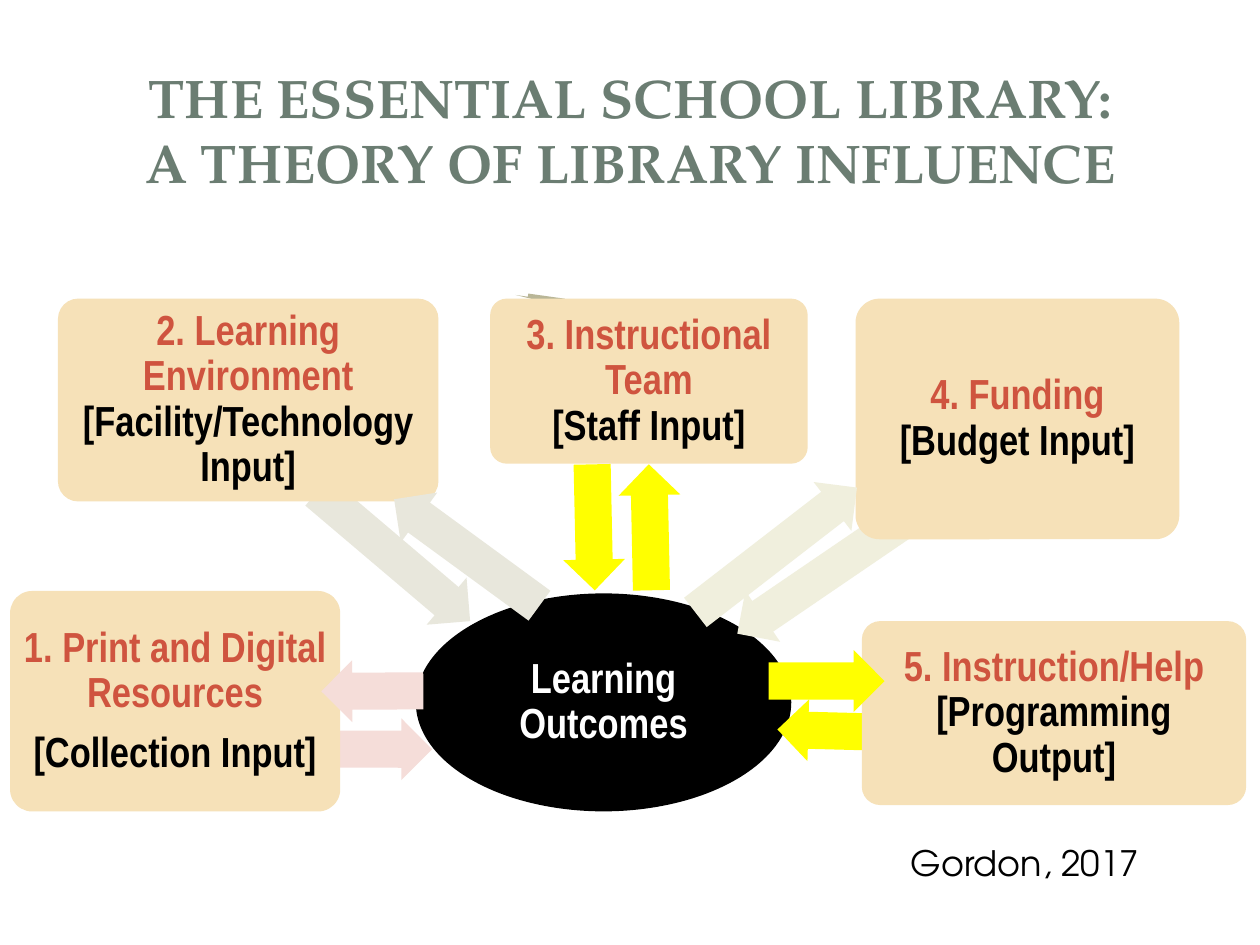
from pptx import Presentation
from pptx.dml.color import RGBColor
from pptx.enum.shapes import MSO_SHAPE
from pptx.enum.text import MSO_ANCHOR, PP_ALIGN
from pptx.util import Inches, Pt

ELLIPSE = MSO_SHAPE.OVAL
ROUNDED = MSO_SHAPE.ROUNDED_RECTANGLE
LEFT_ARROW = MSO_SHAPE.LEFT_ARROW
MIDDLE = MSO_ANCHOR.MIDDLE
CENTER, LEFT = PP_ALIGN.CENTER, PP_ALIGN.LEFT

BLACK = RGBColor(0x00, 0x00, 0x00)
WHITE = RGBColor(0xFF, 0xFF, 0xFF)
SAGE = RGBColor(0x6B, 0x7D, 0x72)
SAND = RGBColor(0xF6, 0xE1, 0xB8)
BRICK = RGBColor(0xCF, 0x54, 0x3F)
PINK = RGBColor(0xF5, 0xDD, 0xD9)
STONE = RGBColor(0xE8, 0xE7, 0xDC)
KHAKI = RGBColor(0xB9, 0xB6, 0x97)
CREAM = RGBColor(0xF0, 0xEF, 0xDD)
YELLOW = RGBColor(0xFF, 0xFF, 0x00)

COLUMNS, ROWS = 100, 75
ARROW_ROWS = 4.9


class Diagram:
    """Places styled elements on one slide, measured in grid columns and rows."""

    title_font = {"name": "TeX Gyre Pagella", "size": Pt(31), "bold": True}
    label_font = {"name": "Arial Narrow", "size": Pt(24), "bold": True}
    credit_font = {"name": "TeX Gyre Adventor", "size": Pt(20), "bold": False}
    label_paragraph = {"alignment": CENTER, "line_spacing": 0.9, "space_after": Pt(8.4)}

    def __init__(self, deck):
        self.slide = deck.slides.add_slide(deck.slide_layouts[5])
        self.column = deck.slide_width / COLUMNS
        self.row = deck.slide_height / ROWS

    def area(self, left, top, width, height):
        return (round(left * self.column), round(top * self.row),
                round(width * self.column), round(height * self.row))

    def apply(self, target, values):
        for name, value in values.items():
            setattr(target, name, value)

    def add_text(self, paragraph, text, font, color):
        run = paragraph.add_run()
        run.text = text
        self.apply(run.font, font)
        run.font.color.rgb = color

    def title(self, lines, *area):
        heading = self.slide.shapes.title
        heading.left, heading.top, heading.width, heading.height = self.area(*area)
        frame = heading.text_frame
        self.apply(frame, {"vertical_anchor": MIDDLE, "word_wrap": True,
                           "margin_bottom": Inches(0.42)})
        paragraph = frame.paragraphs[0]
        paragraph.alignment = CENTER
        for index, line in enumerate(lines):
            if index:
                paragraph.add_line_break()
            self.add_text(paragraph, line, self.title_font, SAGE)

    def shape(self, preset, area, color, adjustments=()):
        item = self.slide.shapes.add_shape(preset, *self.area(*area))
        item.shadow.inherit = False
        item.fill.solid()
        item.fill.fore_color.rgb = color
        item.line.fill.background()
        for index, value in enumerate(adjustments):
            item.adjustments[index] = value
        return item

    def label_frame(self, item, inset):
        frame = item.text_frame
        margins = {f"margin_{side}": Inches(inset)
                   for side in ("left", "right", "top", "bottom")}
        self.apply(frame, {"word_wrap": True, "vertical_anchor": MIDDLE, **margins})
        self.apply(frame.paragraphs[0], self.label_paragraph)
        return frame

    def hub(self, text, *area):
        frame = self.label_frame(self.shape(ELLIPSE, area, BLACK), 0.02)
        self.add_text(frame.paragraphs[0], text, self.label_font, WHITE)

    def factor(self, name, role, area, inset=0.05, spaced=False):
        """Box with a coloured name and its role; spaced puts a gap between them."""
        frame = self.label_frame(self.shape(ROUNDED, area, SAND, [0.1]), inset)
        paragraph = frame.paragraphs[0]
        self.add_text(paragraph, name, self.label_font, BRICK)
        if spaced:
            paragraph = frame.add_paragraph()
            self.apply(paragraph, self.label_paragraph)
        else:
            paragraph.add_line_break()
        self.add_text(paragraph, role, self.label_font, BLACK)

    def arrow(self, left, top, length, rotation, color):
        area = (left, top, length, ARROW_ROWS)
        self.shape(LEFT_ARROW, area, color, [0.6, 0.5]).rotation = rotation

    def credit(self, text, *area):
        frame = self.slide.shapes.add_textbox(*self.area(*area)).text_frame
        frame.word_wrap = True
        frame.paragraphs[0].alignment = LEFT
        self.add_text(frame.paragraphs[0], text, self.credit_font, BLACK)


# Each factor box covers the tail of its inward arrow.
FACTORS = [
    ((13.6, 57, 20.7, 180.1, PINK),
     {"name": "1. Print and Digital Resources", "role": "[Collection Input]",
      "area": (0.8, 46.9, 26.2, 17.5), "spaced": True}),
    ((23.3, 41.7, 15.9, 220.3, STONE),
     {"name": "2. Learning Environment", "role": "[Facility/Technology Input]",
      "area": (4.6, 23.7, 30.2, 16.1), "inset": 0.02}),
    ((43.1, 21.3, 0.5, 278, KHAKI),
     {"name": "3. Instructional Team", "role": "[Staff Input]",
      "area": (38.9, 23.7, 25.2, 13.1)}),
    ((56.9, 42.6, 18.6, 325.7, CREAM),
     {"name": "4. Funding", "role": "[Budget Input]",
      "area": (67.9, 23.7, 25.7, 19.1)}),
    ((61.7, 55.7, 19.7, 1.5, YELLOW),
     {"name": "5. Instruction/Help", "role": "[Programming Output]",
      "area": (68.4, 49.3, 30.5, 14.6)}),
]
FRONT_ARROWS = [
    (25.5, 52.4, 8.1, 359.7, PINK),
    (29.9, 41.4, 14.3, 36.2, STONE),
    (46.6, 39.4, 10, 88.8, YELLOW),
    (53.5, 41.2, 16.2, 142.3, CREAM),
    (61, 51.6, 9.2, 180, YELLOW),
    (42.1, 39.4, 10, 268.8, YELLOW),
]


def main():
    deck = Presentation()
    deck.slide_width, deck.slide_height = Inches(10), Inches(7.5)
    diagram = Diagram(deck)
    diagram.title(["THE ESSENTIAL SCHOOL LIBRARY:", "A THEORY OF LIBRARY INFLUENCE"],
                  0, 2.7, 100, 18.8)
    diagram.hub("Learning Outcomes", 33, 47.1, 29.8, 17.3)
    for inward_arrow, box in FACTORS:
        diagram.arrow(*inward_arrow)
        diagram.factor(**box)
    for front_arrow in FRONT_ARROWS:
        diagram.arrow(*front_arrow)
    diagram.credit("Gordon, 2017", 71.3, 66.3, 25.5, 4.4)
    deck.save("out.pptx")


if __name__ == "__main__":
    main()
